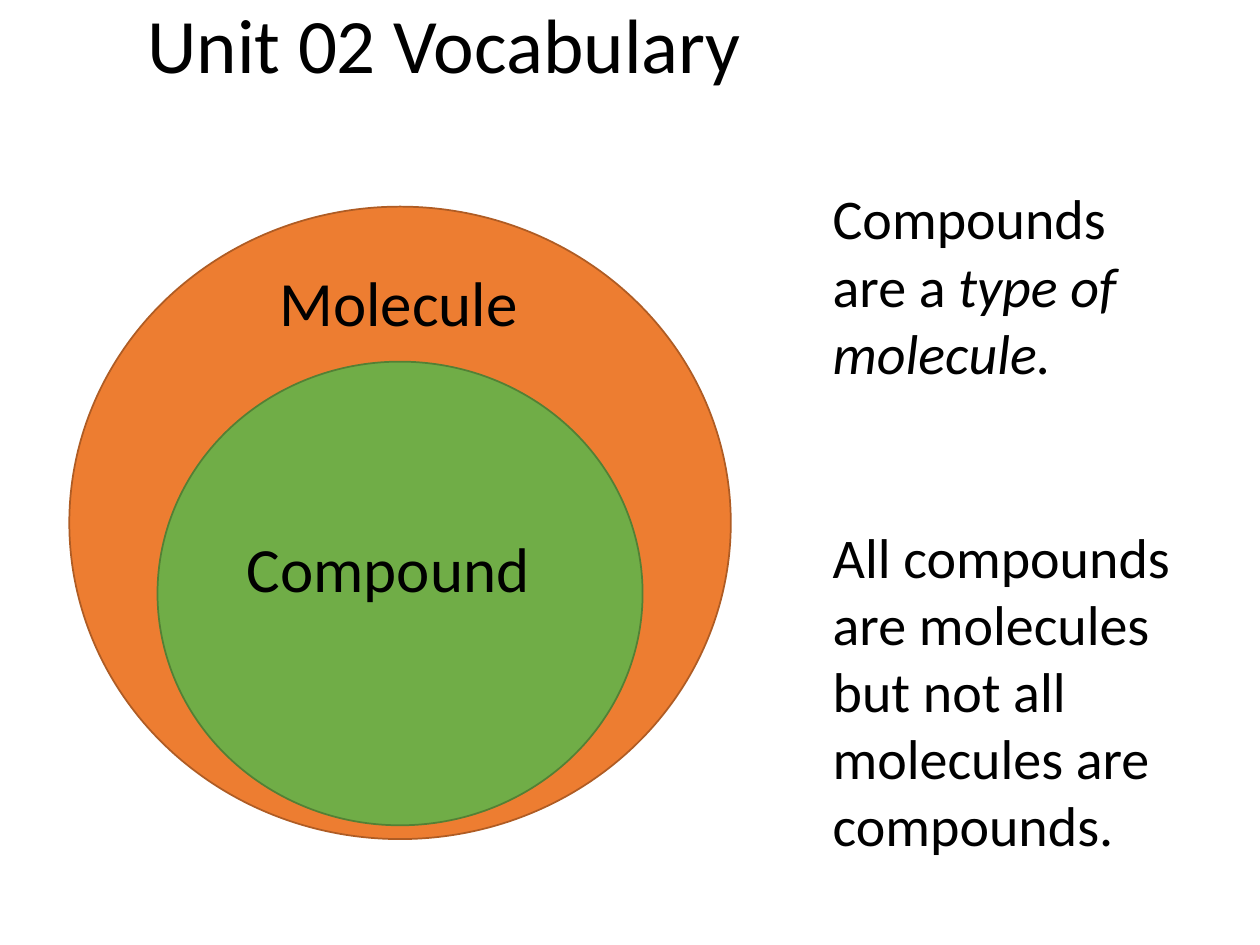
import pptx
import pptx.util
import pptx.dml.color
import pptx.enum.shapes
import pptx.enum.text

INK = {"text": "000000", "outer": "ED7D31", "rim": "AF5C24",
       "inner": "70AD47", "edge": "538035"}
FONT = "Calibri"
WIDE, HIGH = pptx.util.Inches(10), pptx.util.Inches(7.5)


def color(name):
    return pptx.dml.color.RGBColor.from_string(INK[name])


def part(box, x, y, w, h):
    """Return the area at the given percentages of a box."""
    left, top, width, height = box
    return (int(left + width * x / 100), int(top + height * y / 100),
            int(width * w / 100), int(height * h / 100))


def style(para, size):
    para.font.name = FONT
    para.font.size = pptx.util.Pt(size)
    para.font.color.rgb = color("text")


def add_title(slide, box, text):
    title = slide.shapes.title
    title.left, title.top, title.width, title.height = box
    frame = title.text_frame
    frame.text = text
    frame.vertical_anchor = pptx.enum.text.MSO_ANCHOR.MIDDLE
    para = frame.paragraphs[0]
    para.alignment = pptx.enum.text.PP_ALIGN.LEFT
    para.line_spacing = 0.9
    style(para, 44)


def add_venn(slide, box):
    group = slide.shapes.add_group_shape()
    # Nested sets
    for area, fill, line in (
            (box, "outer", "rim"),
            (part(box, 13.33, 24.5, 73.33, 73.31), "inner", "edge")):
        oval = group.shapes.add_shape(pptx.enum.shapes.MSO_SHAPE.OVAL, *area)
        oval.shadow.inherit = False
        oval.fill.solid()
        oval.fill.fore_color.rgb = color(fill)
        oval.line.color.rgb = color(line)
        oval.line.width = pptx.util.Pt(1)
    # Set names
    for text, x, y, w in (("Molecule", 29.9, 7.97, 46.48),
                          ("Compound", 24.95, 50, 51.43)):
        label = group.shapes.add_textbox(*part(box, x, y, w, 14.14))
        frame = label.text_frame
        frame.word_wrap = True
        frame.text = text
        style(frame.paragraphs[0], 36)


def add_notes(slide, box):
    frame = slide.shapes.add_textbox(*box).text_frame
    frame.word_wrap = True
    first = frame.paragraphs[0]
    first.add_run().text = "Compounds are a "
    kind = first.add_run()
    kind.text = "type of molecule."
    kind.font.italic = True
    second = frame.add_paragraph()
    second.text = ("All compounds are molecules but not all "
                   "molecules are compounds.")
    second.space_before = pptx.util.Pt(78)
    for para in frame.paragraphs:
        style(para, 32)


def main():
    deck = pptx.Presentation()
    deck.slide_width, deck.slide_height = WIDE, HIGH
    slide = deck.slides.add_slide(deck.slide_layouts[5])
    page = (0, 0, WIDE, HIGH)
    add_title(slide, part(page, 10.7, -4.67, 84.3, 19.6), "Unit 02 Vocabulary")
    add_venn(slide, part(page, 5.5, 21.87, 52.5, 66.93))
    add_notes(slide, part(page, 65.1, 18.8, 29.9, 73.2))
    deck.save("out.pptx")


if __name__ == "__main__":
    main()
